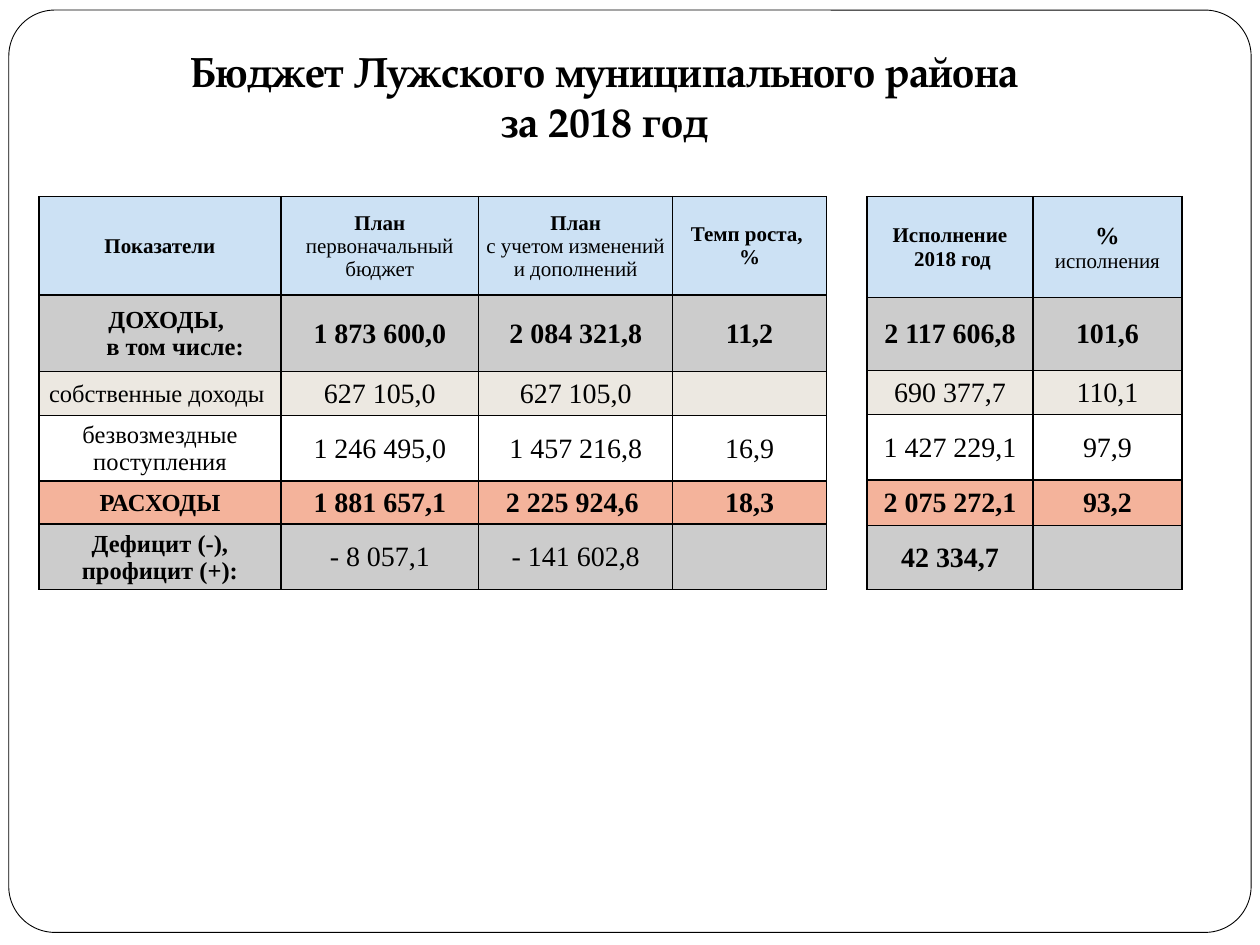
from lxml import etree
from pptx import Presentation
from pptx.dml.color import RGBColor
from pptx.enum.shapes import MSO_SHAPE
from pptx.enum.text import MSO_ANCHOR, PP_ALIGN
from pptx.oxml.ns import qn
from pptx.util import Inches, Pt

ROUNDED = MSO_SHAPE.ROUNDED_RECTANGLE
MIDDLE = MSO_ANCHOR.MIDDLE
CENTER = PP_ALIGN.CENTER

BLACK, WHITE = "000000", "FFFFFF"
BLUE, GRAY, BEIGE, CORAL = "CCE1F4", "CCCCCC", "ECE8E1", "F4B39B"
ROW_FILLS = [BLUE, GRAY, BEIGE, WHITE, CORAL, GRAY]


def color(value):
    return RGBColor.from_string(value)


def line(text, size=12, bold=False, shift=0):
    return text, size, bold, shift


def amounts(*values, bold=False):
    return [[line(value, 16, bold)] if value else [] for value in values]


class BudgetSlide:
    title_font = "TeX Gyre Pagella"
    table_font = "Times New Roman"

    def __init__(self, slide):
        self.slide = slide

    def set_lines(self, frame, lines, font):
        frame.word_wrap = True
        frame.text = "\n".join(text for text, *_ in lines)
        for paragraph, (_, size, bold, shift) in zip(frame.paragraphs, lines):
            paragraph.alignment = CENTER
            if shift:
                paragraph._p.get_or_add_pPr().set("marL", str(Inches(shift)))
            for run in paragraph.runs:
                run.font.name = font
                run.font.size = Pt(size)
                run.font.bold = bold
                run.font.color.rgb = color(BLACK)

    def frame(self, left, top, width, height):
        border = self.slide.shapes.add_shape(
            ROUNDED, Inches(left), Inches(top), Inches(width), Inches(height))
        border.adjustments[0] = 0.05
        border.shadow.inherit = False
        border.fill.solid()
        border.fill.fore_color.rgb = color(WHITE)
        border.line.color.rgb = color(BLACK)
        border.line.width = Pt(0.5)

    def title(self, left, top, width, height, lines):
        box = self.slide.shapes.add_textbox(
            Inches(left), Inches(top), Inches(width), Inches(height))
        self.set_lines(box.text_frame, lines, self.title_font)

    def outline(self, cell):
        properties = cell._tc.get_or_add_tcPr()
        for side in ("a:lnL", "a:lnR", "a:lnT", "a:lnB"):
            edge = etree.SubElement(properties, qn(side), w=str(Pt(1)))
            fill = etree.SubElement(edge, qn("a:solidFill"))
            etree.SubElement(fill, qn("a:srgbClr"), val=BLACK)

    def table(self, left, top, widths, heights, rows):
        table = self.slide.shapes.add_table(
            len(heights), len(widths), Inches(left), Inches(top),
            Inches(sum(widths)), Inches(sum(heights))).table
        for column, width in zip(table.columns, widths):
            column.width = Inches(width)
        for row, height, values, fill in zip(table.rows, heights, rows, ROW_FILLS):
            row.height = Inches(height)
            for cell, lines in zip(row.cells, values):
                cell.margin_left = cell.margin_right = cell.margin_top = Inches(0.01)
                cell.margin_bottom = 0
                cell.vertical_anchor = MIDDLE
                self.outline(cell)
                cell.fill.solid()
                cell.fill.fore_color.rgb = color(fill)
                self.set_lines(cell.text_frame, lines, self.table_font)


PLAN_ROWS = [
    [[line("Показатели", bold=True)],
     [line("План", bold=True), line("первоначальный бюджет")],
     [line("План", bold=True), line("с учетом изменений и дополнений")],
     [line("Темп роста, ", bold=True), line("%", bold=True)]],
    [[line("ДОХОДЫ,", 14, True, 0.1), line("в том числе:", 14, True, 0.24)],
     *amounts("1 873 600,0", "2 084 321,8", "11,2", bold=True)],
    [[line("собственные доходы ", 14)], *amounts("627 105,0", "627 105,0", "")],
    [[line("безвозмездные поступления", 14)],
     *amounts("1 246 495,0", "1 457 216,8", "16,9")],
    [[line("РАСХОДЫ", 14, True)],
     *amounts("1 881 657,1", "2 225 924,6 ", "18,3", bold=True)],
    [[line("Дефицит (-), профицит (+):", 14, True)],
     *amounts("- 8 057,1", "- 141 602,8", "")],
]

EXECUTION_ROWS = [
    [[line("Исполнение", bold=True), line(" 2018 год", bold=True)],
     [line("%", 14, True), line("исполнения")]],
    amounts("2 117 606,8", "101,6", bold=True),
    amounts("690 377,7", "110,1"),
    amounts("1 427 229,1", "97,9"),
    amounts("2 075 272,1", "93,2", bold=True),
    amounts("42 334,7", "", bold=True),
]


def main():
    deck = Presentation()
    deck.slide_width, deck.slide_height = Inches(10), Inches(7.5)
    budget = BudgetSlide(deck.slides.add_slide(deck.slide_layouts[6]))
    budget.frame(0.07, 0.08, 9.86, 7.32)
    budget.table(0.31, 1.56, [1.92, 1.57, 1.54, 1.22],
                 [0.78, 0.61, 0.35, 0.52, 0.34, 0.52], PLAN_ROWS)
    budget.table(6.88, 1.56, [1.32, 1.18],
                 [0.8, 0.58, 0.35, 0.52, 0.36, 0.51], EXECUTION_ROWS)
    budget.title(0.39, 0.31, 8.9, 0.91, [
        line("Бюджет Лужского муниципального района ", 24, True),
        line("за 2018 год ", 24, True)])
    deck.save("out.pptx")


if __name__ == "__main__":
    main()
